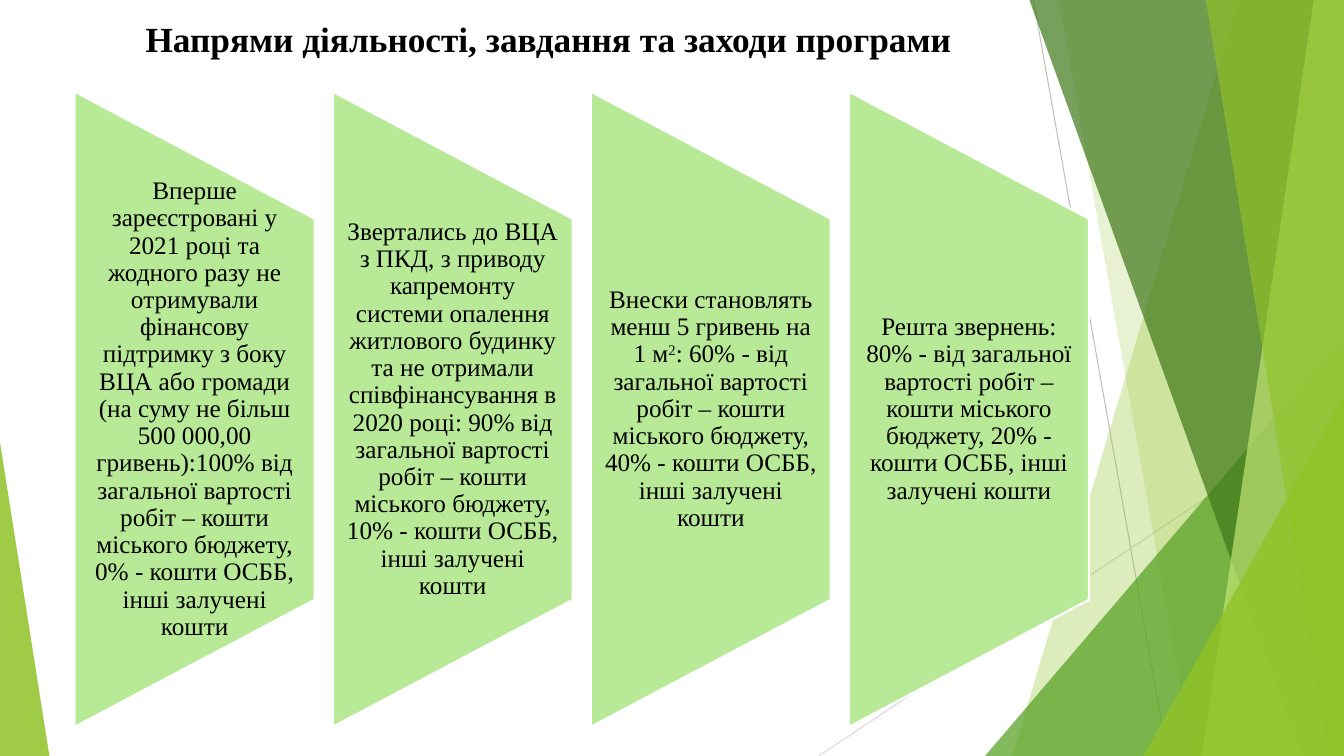
from lxml import etree
from pptx import Presentation, util as u
from pptx.dml.color import RGBColor
from pptx.enum import shapes as s, text as t
from pptx.oxml.ns import qn

W, H = 13.33, 7.5
deck = Presentation()
deck.slide_width, deck.slide_height = u.Inches(W), u.Inches(H)
slide = deck.slides.add_slide(deck.slide_layouts[6])
canvas = slide.shapes


def paint(part, color, opacity=100, outline=None):
    part.shadow.inherit = False
    part.fill.solid()
    part.fill.fore_color.rgb = RGBColor.from_string(color)
    if opacity < 100:
        tint = part.fill._xPr.find(".//" + qn("a:srgbClr"))
        etree.SubElement(tint, qn("a:alpha")).set("val", str(opacity * 1000))
    if outline:
        part.line.color.rgb = RGBColor.from_string(outline)
        part.line.width = u.Pt(1.5)
    else:
        part.line.fill.background()


def write(words, box, size=18, bold=False, anchor=t.MSO_ANCHOR.MIDDLE,
          inset=0.12, spacing=0.9):
    """Write centred text; every second piece between ^ marks is superscript."""
    frame = canvas.add_textbox(*map(u.Inches, box)).text_frame
    frame.word_wrap = True
    frame.vertical_anchor = anchor
    frame.margin_left = frame.margin_right = u.Inches(inset)
    frame.margin_top = frame.margin_bottom = 0
    line = frame.paragraphs[0]
    line.alignment = t.PP_ALIGN.CENTER
    line.line_spacing = spacing
    for i, piece in enumerate(words.split("^")):
        run = line.add_run()
        run.text = piece
        run.font.name, run.font.size, run.font.bold = "Times New Roman", u.Pt(size), bold
        run.font.color.rgb = RGBColor.from_string("000000")
        if i % 2:
            run._r.get_or_add_rPr().set("baseline", "30000")


# Thin background lines
for x1, y1, x2, y2, gray in [(10.25, 0, 11.58, H, "BFBFBF"),
                             (W, 4.03, 8.12, H, "D9D9D9")]:
    ray = canvas.add_connector(s.MSO_CONNECTOR.STRAIGHT,
                               *map(u.Inches, (x1, y1, x2, y2)))
    ray.line.color.rgb = RGBColor.from_string(gray)
    ray.line.width = u.Pt(0.75)
    etree.SubElement(ray._element.spPr, qn("a:effectLst"))

# Green facets: bands give top and bottom left corners and reach the right edge;
# wedges give left, top, width and the apex position, and stand on the bottom edge
facets = [
    ("band", (12.28, 10.04), "90C226", 30),
    ("band", (10.5, 11.83), "90C226", 20),
    ("wedge", (9.77, 3.33, 3.56, 1), "54A021", 72),
    ("band", (10.21, 12.91), "3F7819", 70),
    ("band", (13.03, 11.92), "C0E474", 70),
    ("band", (11.96, 13.18), "90C226", 65),
    ("wedge", (11.34, 3.93, 1.99, 1), "90C226", 80),
    ("wedge", (0, 4.39, 0.49, 0), "90C226", 85),
]
for kind, place, color, opacity in facets:
    if kind == "band":
        top_x, bottom_x = place
        corners = [(u.Inches(x), u.Inches(y)) for x, y in
                   [(top_x, 0), (W, 0), (W, H), (bottom_x, H)]]
        outline = canvas.build_freeform(*corners[0])
        outline.add_line_segments(corners[1:], close=True)
        facet = outline.convert_to_shape()
    else:
        left, top, width, apex = place
        facet = canvas.add_shape(s.MSO_SHAPE.ISOSCELES_TRIANGLE,
                                 *map(u.Inches, (left, top, width, H - top)))
        facet.adjustments[0] = apex
    paint(facet, color, opacity)

# Title
write("Напрями діяльності, завдання та заходи програми", (0.74, 0.17, 9.4, 0.66),
      size=25.2, bold=True, anchor=t.MSO_ANCHOR.TOP, inset=0.1, spacing=1.0)

# Four conditions, each on a panel turned on its side
conditions = [
    "Вперше зареєстровані у 2021 році та жодного разу не отримували фінансову "
    "підтримку з боку ВЦА або громади (на суму не більш 500 000,00 гривень):100% "
    "від загальної вартості робіт – кошти міського бюджету, 0% - кошти ОСББ, "
    "інші залучені кошти",
    "Звертались до ВЦА з ПКД, з приводу капремонту системи опалення житлового "
    "будинку та не отримали співфінансування в 2020 році: 90% від загальної "
    "вартості робіт – кошти міського бюджету, 10% - кошти ОСББ, інші залучені кошти",
    "Внески становлять менш 5 гривень на 1 м^2^: 60% - від загальної вартості робіт "
    "– кошти міського бюджету, 40% - кошти ОСББ, інші залучені кошти",
    "Решта звернень: 80% - від загальної вартості робіт – кошти міського бюджету, "
    "20% - кошти ОСББ, інші залучені кошти",
]
first_left, column, pitch = 0.74, 2.38, 2.56
length, middle, text_height = 6.3, 4.06, 3.78
for i, condition in enumerate(conditions):
    left = first_left + i * pitch
    panel = canvas.add_shape(
        s.MSO_SHAPE.FLOWCHART_MANUAL_OPERATION,
        *map(u.Inches, (left + (column - length) / 2, middle - column / 2, length, column)))
    panel.rotation = 270
    paint(panel, "B7E996", outline="FFFFFF")
    write(condition, (left, middle - text_height / 2, column, text_height))

deck.save("out.pptx")
